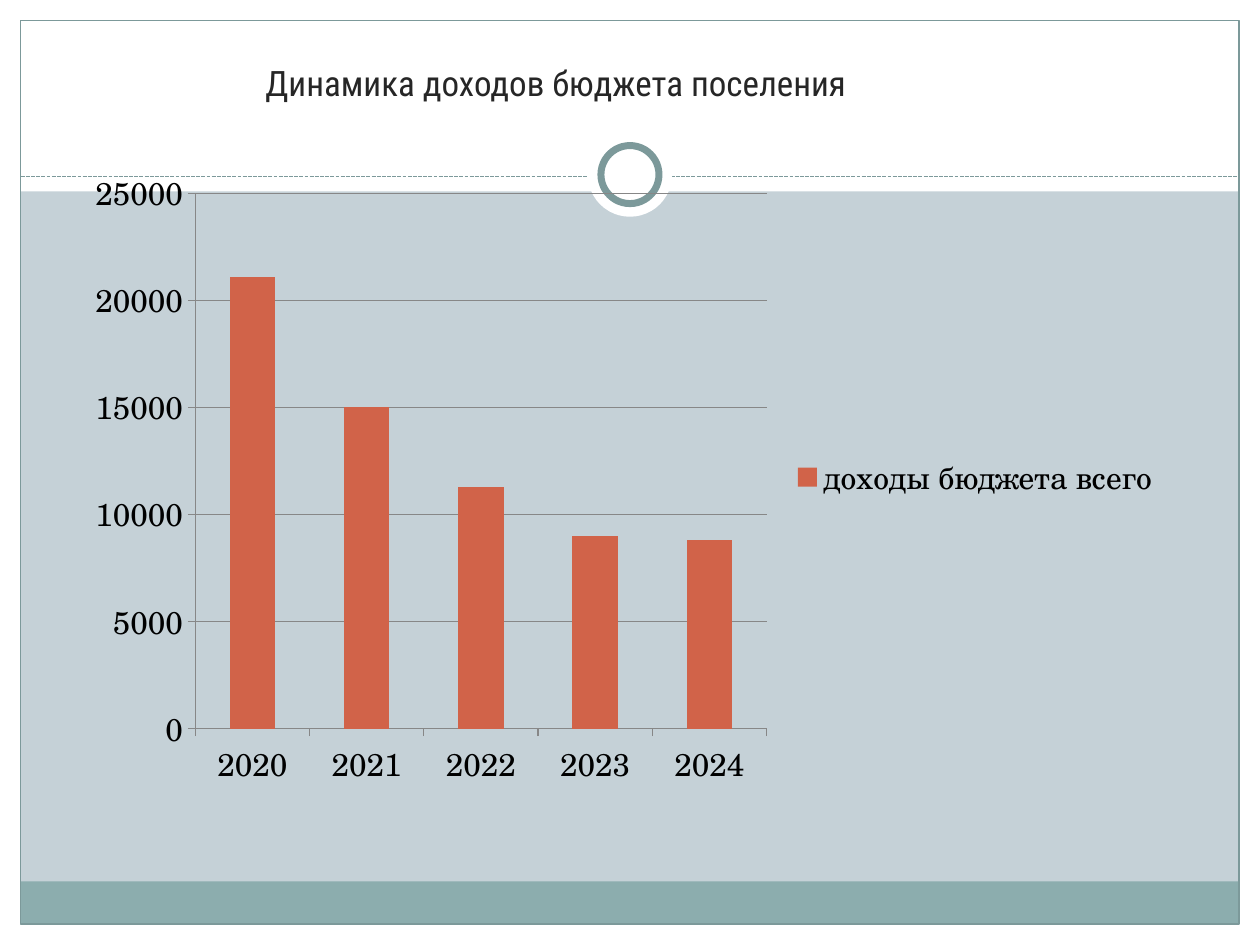
import pptx
import pptx.util
import pptx.chart.data
import pptx.dml.color
import pptx.enum.chart
import pptx.enum.dml
import pptx.enum.shapes
import pptx.enum.text
import lxml.etree

Cm, Pt = pptx.util.Cm, pptx.util.Pt
KIND = pptx.enum.shapes.MSO_SHAPE
XL = pptx.enum.chart

TITLE = "Динамика доходов бюджета поселения"
SERIES = "доходы бюджета всего"
DATA = {"2020": 21100, "2021": 15000, "2022": 11300, "2023": 9000, "2024": 8800}
FONTS = {"title": "Roboto Condensed", "chart": "TeX Gyre Schola"}
COLORS = {"back": "C5D1D7", "white": "FFFFFF", "foot": "8CADAE", "edge": "7C999A",
          "bar": "D16349", "grid": "878787", "text": "000000", "title": "262626"}

WIDE, HIGH = 25.4, 19.05
EDGE, HEAD, FOOT = 0.42, 3.86, 0.86
INNER, BASE = WIDE - 2 * EDGE, HIGH - EDGE
RULE, HUB = 3.56, 3.52
BANDS = [
    (0, BASE, WIDE, EDGE, "white"),
    (0, 0, WIDE, HEAD, "white"),
    (0, 0, EDGE, HIGH, "white"),
    (WIDE - EDGE, 0, EDGE, HIGH, "white"),
    (EDGE, BASE - FOOT, INNER, FOOT, "foot"),
]
DISCS = [(1.7, None), (1.17, 4)]
PLOT = {"x": 0.11, "y": 0.06, "w": 0.52, "h": 0.83}


def tint(name):
    return pptx.dml.color.RGBColor.from_string(COLORS[name])


def stroke(line, name, size):
    line.color.rgb = tint(name)
    line.width = Pt(size)


def shape(slide, kind, box, fill=None, size=None):
    item = slide.shapes.add_shape(kind, *map(Cm, box))
    item.shadow.inherit = False
    if fill:
        item.fill.solid()
        item.fill.fore_color.rgb = tint(fill)
    else:
        item.fill.background()
    if size:
        stroke(item.line, "edge", size)
    else:
        item.line.fill.background()


def frame(slide):
    for *box, fill in BANDS:
        shape(slide, KIND.RECTANGLE, box, fill)
    shape(slide, KIND.RECTANGLE, (EDGE, EDGE, INNER, BASE - EDGE), size=0.75)
    rule = slide.shapes.add_connector(
        pptx.enum.shapes.MSO_CONNECTOR.STRAIGHT,
        Cm(EDGE), Cm(RULE), Cm(WIDE - EDGE), Cm(RULE))
    stroke(rule.line, "edge", 0.75)
    rule.line.dash_style = pptx.enum.dml.MSO_LINE.SQUARE_DOT
    props = rule.element.spPr
    lxml.etree.SubElement(props, pptx.oxml.ns.qn("a:effectLst"))
    for span, size in DISCS:
        box = (WIDE / 2 - span / 2, HUB - span / 2, span, span)
        shape(slide, KIND.OVAL, box, "white", size)


def place(chart):
    tag = pptx.oxml.ns.qn
    area = chart.element.find(".//" + tag("c:plotArea"))
    old = area.find(tag("c:layout"))
    if old is not None:
        area.remove(old)
    layout = lxml.etree.Element(tag("c:layout"))
    area.insert(0, layout)
    manual = lxml.etree.SubElement(layout, tag("c:manualLayout"))
    rules = {"layoutTarget": "inner", "xMode": "edge", "yMode": "edge", **PLOT}
    for name, value in rules.items():
        lxml.etree.SubElement(manual, tag("c:" + name)).set("val", str(value))


def graph(slide):
    data = pptx.chart.data.CategoryChartData()
    data.categories = list(DATA)
    data.add_series(SERIES, list(DATA.values()))
    chart = slide.shapes.add_chart(
        XL.XL_CHART_TYPE.COLUMN_CLUSTERED,
        Cm(1.5), Cm(3.12), Cm(22.15), Cm(13), data).chart
    chart.has_title = False
    chart.font.name = FONTS["chart"]
    chart.font.size = Pt(18)
    chart.font.color.rgb = tint("text")
    chart.has_legend = True
    chart.legend.position = XL.XL_LEGEND_POSITION.RIGHT
    chart.legend.include_in_layout = False
    plot = chart.plots[0]
    plot.gap_width = 150
    plot.vary_by_categories = False
    bars = plot.series[0].format.fill
    bars.solid()
    bars.fore_color.rgb = tint("bar")
    for axis in (chart.category_axis, chart.value_axis):
        axis.major_tick_mark = XL.XL_TICK_MARK.OUTSIDE
        axis.minor_tick_mark = XL.XL_TICK_MARK.NONE
        stroke(axis.format.line, "grid", 0.75)
    scale = chart.value_axis
    scale.minimum_scale, scale.maximum_scale, scale.major_unit = 0, 25000, 5000
    scale.has_major_gridlines = True
    stroke(scale.major_gridlines.format.line, "grid", 0.75)
    place(chart)


def title(slide):
    text = slide.shapes.add_textbox(Cm(5.1), Cm(1.12), Cm(14.55), Cm(1.12)).text_frame
    text.word_wrap = True
    text.auto_size = pptx.enum.text.MSO_AUTO_SIZE.SHAPE_TO_FIT_TEXT
    run = text.paragraphs[0].add_run()
    run.text = TITLE
    run.font.name = FONTS["title"]
    run.font.size = Pt(20)
    run.font.color.rgb = tint("title")


def main():
    deck = pptx.Presentation()
    deck.slide_width, deck.slide_height = Cm(WIDE), Cm(HIGH)
    slide = deck.slides.add_slide(deck.slide_layouts[6])
    slide.background.fill.solid()
    slide.background.fill.fore_color.rgb = tint("back")
    frame(slide)
    graph(slide)
    title(slide)
    deck.save("out.pptx")


if __name__ == "__main__":
    main()
